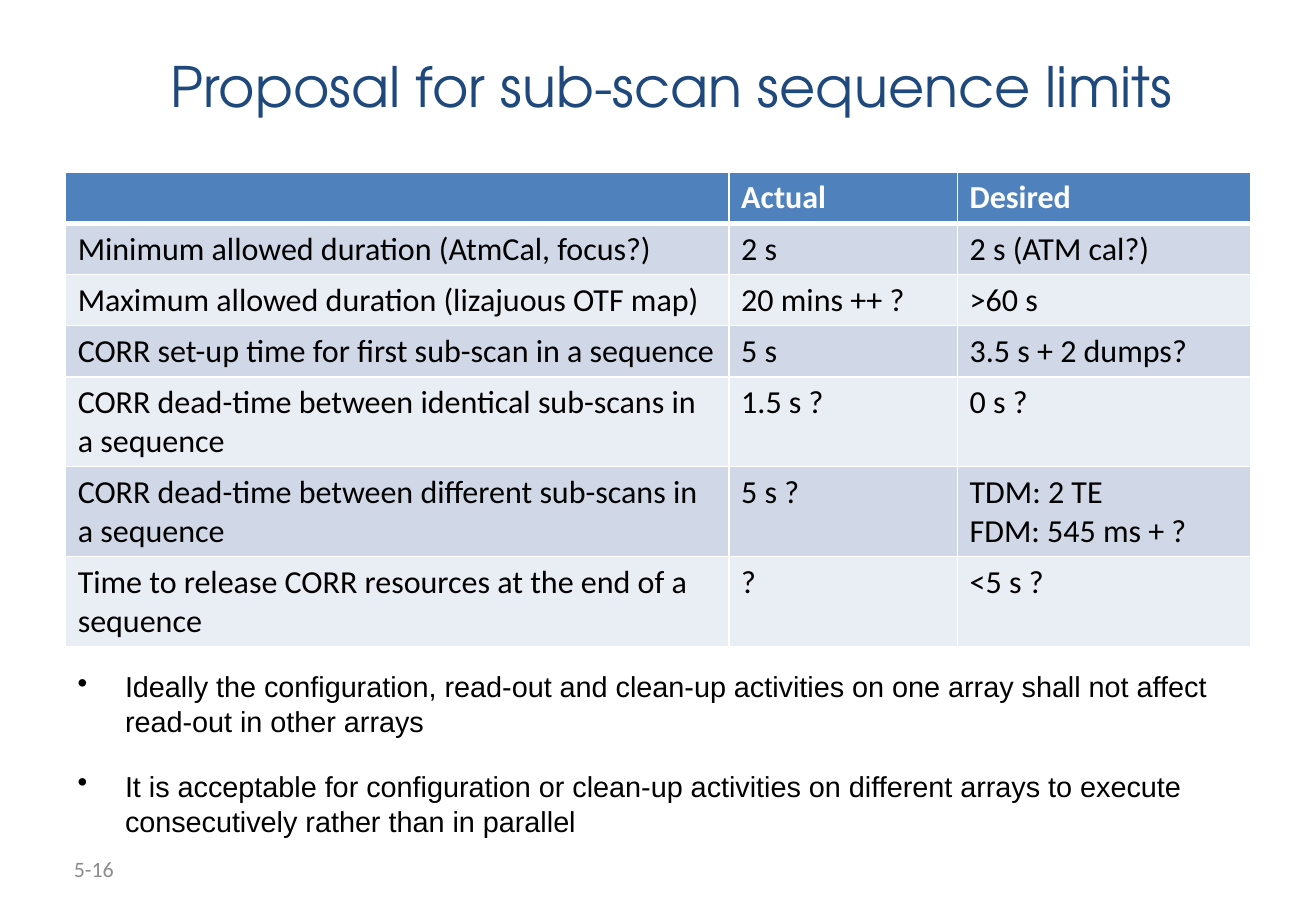
import pptx
import pptx.dml.color
import pptx.enum.text
import pptx.oxml
import pptx.oxml.ns
import pptx.util

Inches = pptx.util.Inches
Pt = pptx.util.Pt
RGBColor = pptx.dml.color.RGBColor
Anchor = pptx.enum.text.MSO_ANCHOR
Align = pptx.enum.text.PP_ALIGN

NAVY = RGBColor(0x1F, 0x49, 0x7D)
BLUE = RGBColor(0x4F, 0x81, 0xBD)
BAND_DARK = RGBColor(0xD0, 0xD8, 0xE8)
BAND_LIGHT = RGBColor(0xE9, 0xED, 0xF4)
GREY = RGBColor(0x8C, 0x8C, 0x8C)
WHITE = RGBColor(0xFF, 0xFF, 0xFF)
BLACK = RGBColor(0, 0, 0)

COLUMN_WIDTHS = (5.46, 1.88, 2.41)
SINGLE_ROW, DOUBLE_ROW = 0.42, 0.74
LIMITS = [
    ("", "Actual", "Desired"),
    ("Minimum allowed duration (AtmCal, focus?)", "2 s", "2 s (ATM cal?)"),
    ("Maximum allowed duration (lizajuous OTF map)", "20 mins ++ ?", ">60 s"),
    ("CORR set-up time for first sub-scan in a sequence", "5 s", "3.5 s + 2 dumps?"),
    ("CORR dead-time between identical sub-scans in a sequence", "1.5 s ?", "0 s ?"),
    ("CORR dead-time between different sub-scans in a sequence", "5 s ?",
     "TDM: 2 TE\nFDM: 545 ms + ?"),
    ("Time to release CORR resources at the end of a sequence", "?", "<5 s ?"),
]
REMARKS = [
    "Ideally the configuration, read-out and clean-up activities on one array "
    "shall not affect read-out in other arrays",
    "It is acceptable for configuration or clean-up activities on different arrays "
    "to execute consecutively rather than in parallel",
]


class LimitsPage:
    """Holds the text style and the current page, and adds its elements."""

    def __init__(self, deck):
        """Add a title-only page to the deck."""
        self.page = deck.slides.add_slide(deck.slide_layouts[5])
        self.body_font = "Calibri"

    def add_lines(self, frame, lines, size, color, font=None, bold=False):
        """Add one paragraph per line and return the paragraphs."""
        frame.word_wrap = True
        for index, line in enumerate(lines):
            para = frame.paragraphs[0] if index == 0 else frame.add_paragraph()
            span = para.add_run()
            span.text = line
            span.font.size = Pt(size)
            span.font.name = font or self.body_font
            span.font.color.rgb = color
            span.font.bold = bold
        return frame.paragraphs

    def title(self, text, left, top, width, height):
        """Place and fill the title placeholder."""
        box = self.page.shapes.title
        box.left, box.top = Inches(left), Inches(top)
        box.width, box.height = Inches(width), Inches(height)
        frame = box.text_frame
        frame.auto_size = pptx.enum.text.MSO_AUTO_SIZE.NONE
        frame.vertical_anchor = Anchor.TOP
        paragraphs = self.add_lines(frame, [text], 33, NAVY, "TeX Gyre Adventor")
        paragraphs[0].alignment = Align.CENTER

    def text_box(self, left, top, width, height, anchor=Anchor.TOP):
        """Add an empty text box and return its frame."""
        box = self.page.shapes.add_textbox(
            Inches(left), Inches(top), Inches(width), Inches(height))
        box.text_frame.vertical_anchor = anchor
        return box.text_frame

    def page_number(self, text, *area):
        """Add the page label."""
        self.add_lines(self.text_box(*area, anchor=Anchor.MIDDLE), [text], 13, GREY)

    def bullets(self, lines, *area):
        """Add a bulleted list."""
        for para in self.add_lines(self.text_box(*area), lines, 17.1, BLACK, "Arial"):
            para.space_after = Pt(18)
            properties = para._p.get_or_add_pPr()
            properties.set("marL", str(Inches(0.39)))
            properties.set("indent", str(-Inches(0.39)))
            properties.append(pptx.oxml.parse_xml(
                f'<a:buChar {pptx.oxml.ns.nsdecls("a")} char="•"/>'))

    def borders(self, cell, top, bottom):
        """Draw white borders around a cell."""
        for side, width in (("L", 1), ("R", 1), ("T", top), ("B", bottom)):
            cell._tc.get_or_add_tcPr().append(pptx.oxml.parse_xml(
                f'<a:ln{side} {pptx.oxml.ns.nsdecls("a")} w="{Pt(width)}">'
                f'<a:solidFill><a:srgbClr val="{WHITE}"/></a:solidFill></a:ln{side}>'))

    def table(self, rows, left, top, widths):
        """Add a banded table with a header row."""
        heights = [SINGLE_ROW if index < 4 else DOUBLE_ROW for index in range(len(rows))]
        table = self.page.shapes.add_table(
            len(rows), len(widths), Inches(left), Inches(top),
            Inches(sum(widths)), Inches(sum(heights))).table
        for column, width in zip(table.columns, widths):
            column.width = Inches(width)
        for index, values in enumerate(rows):
            table.rows[index].height = Inches(heights[index])
            header = index == 0
            band = BLUE if header else (BAND_LIGHT, BAND_DARK)[index % 2]
            for cell, value in zip(table.rows[index].cells, values):
                self.borders(cell, 3 if index == 1 else 1, 3 if header else 1)
                cell.fill.solid()
                cell.fill.fore_color.rgb = band
                if value:
                    self.add_lines(cell.text_frame, value.split("\n"), 19,
                                   WHITE if header else BLACK, bold=header)


def main():
    """Build and save the deck."""
    deck = pptx.Presentation()
    deck.slide_width, deck.slide_height = Inches(10.83), Inches(7.5)
    page = LimitsPage(deck)
    page.title("Proposal for sub-scan sequence limits", 1.04, 0.38, 8.97, 0.92)
    page.table(LIMITS, 0.54, 1.42, COLUMN_WIDTHS)
    page.bullets(REMARKS, 0.54, 5.46, 9.75, 1.5)
    page.page_number("5-16", 0.51, 6.95, 2.53, 0.4)
    deck.save("out.pptx")


if __name__ == "__main__":
    main()
